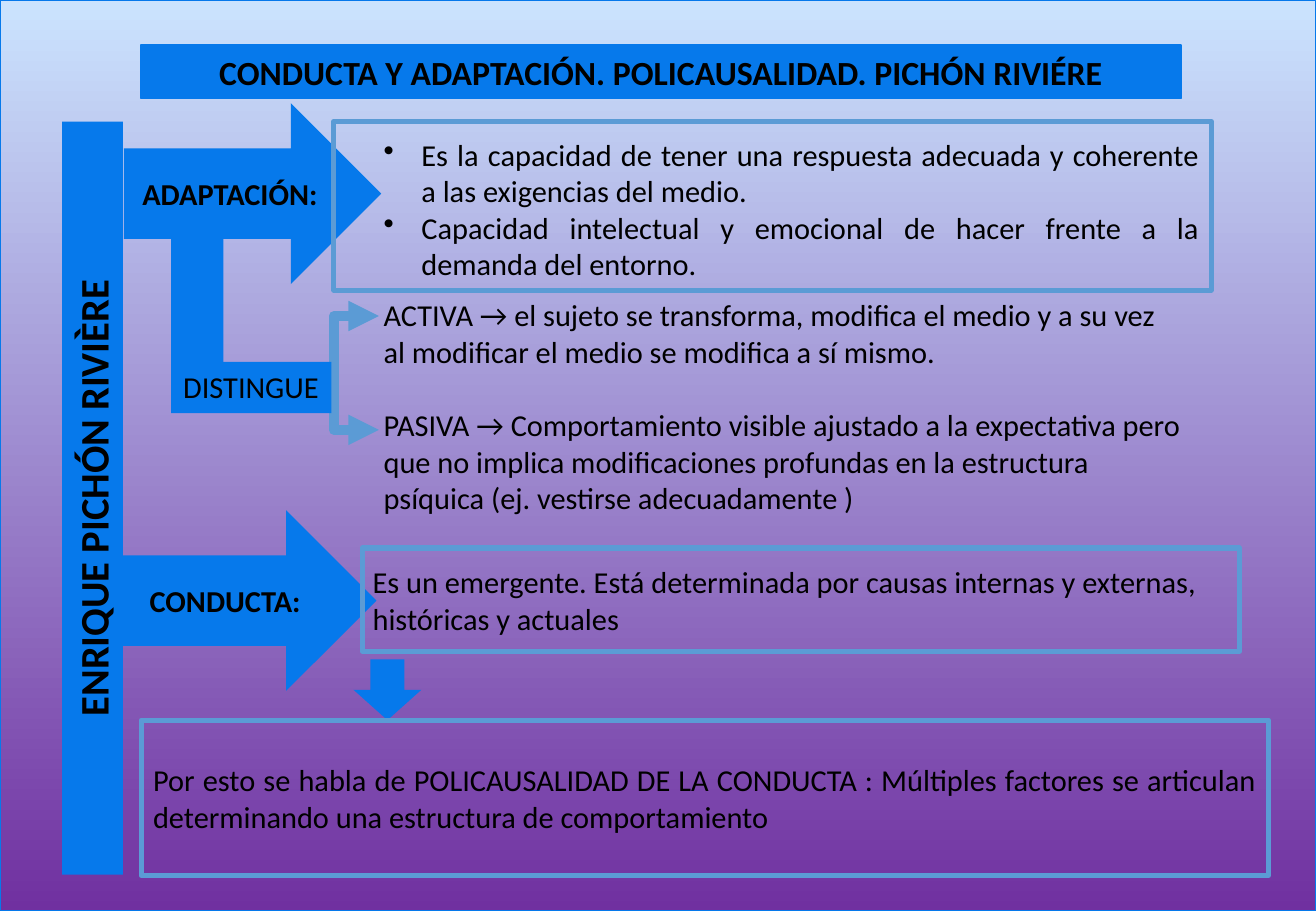
import pptx
import pptx.util
import pptx.dml.color
import pptx.enum.shapes
import pptx.enum.text
import pptx.oxml
import pptx.oxml.ns
from dataclasses import dataclass

Cm = pptx.util.Cm
Pt = pptx.util.Pt
KIND = pptx.enum.shapes.MSO_SHAPE
ALIGN = pptx.enum.text.PP_ALIGN
ANCHOR = pptx.enum.text.MSO_ANCHOR
qn = pptx.oxml.ns.qn


@dataclass(frozen=True)
class Theme:
    font: str = "Calibri"
    ink: str = "000000"
    blue: str = "0679EB"
    pale: str = "5B9BD5"
    sky: str = "CBE4FE"
    plum: str = "7030A0"
    body: int = 18
    head: int = 20
    side: int = 24


theme = Theme()


def tint(code):
    return pptx.dml.color.RGBColor.from_string(code)


def apply(target, values):
    for name, value in values.items():
        setattr(target, name, value)


def place(box, x, y, w, h):
    return box[0] + x, box[1] + y, w, h


def paint(shape, fill=None, line=None, width=1):
    if fill:
        shape.fill.solid()
        shape.fill.fore_color.rgb = tint(fill)
    else:
        shape.fill.background()
    if line:
        shape.line.color.rgb = tint(line)
        shape.line.width = Pt(width)
    else:
        shape.line.fill.background()


def block(slide, kind, box, fill=None, line=None, width=1):
    shape = slide.shapes.add_shape(kind, *map(Cm, box))
    shape.shadow.inherit = False
    paint(shape, fill, line, width)
    return shape


def write(shape, lines, size=theme.body, bold=False, align=ALIGN.LEFT,
          anchor=ANCHOR.TOP, gap=0, dots=False):
    frame = shape.text_frame
    apply(frame, {"word_wrap": True, "vertical_anchor": anchor,
                  "auto_size": pptx.enum.text.MSO_AUTO_SIZE.NONE})
    for index, line in enumerate(lines):
        para = frame.add_paragraph() if index else frame.paragraphs[0]
        apply(para, {"alignment": align, "space_before": Pt(gap if index else 0)})
        run = para.add_run()
        run.text = line
        apply(run.font, {"name": theme.font, "size": Pt(size), "bold": bold})
        run.font.color.rgb = tint(theme.ink)
        if dots:
            props = para._p.get_or_add_pPr()
            props.set("marL", str(Cm(0.79)))
            props.set("indent", str(Cm(-0.79)))
            pptx.oxml.parse_xml(
                '<a:buFont xmlns:a="http://schemas.openxmlformats.org/'
                'drawingml/2006/main" typeface="Arial"/>')
            mark = props.makeelement(qn("a:buChar"), {"char": "•"})
            props.append(mark)


def note(slide, box, lines, **style):
    write(slide.shapes.add_textbox(*map(Cm, box)), lines, **style)


def bend(slide, start, end):
    link = slide.shapes.add_connector(
        pptx.enum.shapes.MSO_CONNECTOR.ELBOW, *map(Cm, start + end))
    link.line.color.rgb = tint(theme.pale)
    link.line.width = Pt(6)
    stroke = link.line._get_or_add_ln()
    stroke.append(stroke.makeelement(qn("a:tailEnd"), {"type": "triangle"}))
    props = link.element.spPr
    props.append(props.makeelement(qn("a:effectLst"), {}))


def backdrop(slide, box):
    shape = block(slide, KIND.RECTANGLE, box, line=theme.blue, width=0.5)
    shape.fill.gradient()
    shape.fill.gradient_angle = 270
    for stop, code, spot in zip(shape.fill.gradient_stops,
                                (theme.sky, theme.plum), (0, 1)):
        stop.color.rgb = tint(code)
        stop.position = spot
    slide.shapes.title.element.addprevious(shape.element)


def header(slide, box):
    title = slide.shapes.title
    apply(title, dict(zip(("left", "top", "width", "height"), map(Cm, box))))
    paint(title, theme.blue, theme.blue, 0.75)
    write(title, ["CONDUCTA Y ADAPTACIÓN. POLICAUSALIDAD. PICHÓN RIVIÉRE"],
          theme.head, True, ALIGN.CENTER, ANCHOR.MIDDLE)


def sidebar(slide, box):
    x, y, w, h = box
    bar = block(slide, KIND.RECTANGLE,
                (x + (w - h) / 2, y + (h - w) / 2, h, w), theme.blue)
    bar.rotation = 270
    write(bar, ["ENRIQUE PICHÓN RIVIÈRE"], theme.side, True, ALIGN.CENTER)


def concept(slide, box, label, border, area, lines, **style):
    arrow = block(slide, KIND.RIGHT_ARROW, place(box, 0, 0, 5.38, 3.78), theme.blue)
    write(arrow, [label], bold=True, align=ALIGN.CENTER, anchor=ANCHOR.MIDDLE)
    block(slide, KIND.RECTANGLE, place(box, *border), line=theme.pale, width=3)
    note(slide, place(box, *area), lines, **style)


def branches(slide, box):
    x, y = box[:2]
    block(slide, KIND.RECTANGLE, place(box, 0, 0, 1.09, 2.82), theme.blue)
    note(slide, place(box, 4.19, 1.09, 17.22, 4.88), [
        "ACTIVA → el sujeto se transforma, modifica el medio y a su vez "
        "al modificar el medio se modifica a sí mismo.",
        "PASIVA → Comportamiento visible ajustado a la expectativa pero "
        "que no implica modificaciones profundas en la estructura "
        "psíquica (ej. vestirse adecuadamente )"], gap=22)
    for start, end in ((3.25, 1.63), (2.92, 4.01)):
        bend(slide, (x + 2.46, y + start), (x + 4.34, y + end))
    tag = block(slide, KIND.RECTANGLE, place(box, 0, 2.59, 3.35, 1.07), theme.blue)
    write(tag, ["DISTINGUE"])


def outcome(slide, box):
    block(slide, KIND.DOWN_ARROW, place(box, 4.44, 0, 1.42, 1.27), theme.blue)
    panel = block(slide, KIND.RECTANGLE, place(box, 0, 1.27, box[2], box[3] - 1.27),
                  line=theme.pale, width=3)
    write(panel, ["Por esto se habla de POLICAUSALIDAD DE LA CONDUCTA : Múltiples "
                  "factores se articulan determinando una estructura de "
                  "comportamiento"], align=ALIGN.JUSTIFY, anchor=ANCHOR.MIDDLE)


def main():
    deck = pptx.Presentation()
    apply(deck, {"slide_width": Cm(27.51), "slide_height": Cm(19.05)})
    slide = deck.slides.add_slide(deck.slide_layouts[5])
    backdrop(slide, (0, 0, 27.51, 19.05))
    header(slide, (2.95, 0.94, 21.74, 1.12))
    sidebar(slide, (1.3, 2.54, 1.27, 15.75))
    concept(slide, (2.59, 2.16), "ADAPTACIÓN:",
            (4.39, 0.38, 18.34, 3.53), (5.18, 0.56, 17.55, 3.33),
            ["Es la capacidad de tener una respuesta adecuada y coherente "
             "a las exigencias del medio.",
             "Capacidad intelectual y emocional de hacer frente a la "
             "demanda del entorno."], align=ALIGN.JUSTIFY, dots=True)
    branches(slide, (3.58, 4.98))
    concept(slide, (2.49, 10.67), "CONDUCTA:",
            (5.08, 0.79, 18.34, 2.16), (5.05, 0.99, 18.01, 1.8),
            ["Es un emergente. Está determinada por causas internas y "
             "externas, históricas y actuales"])
    outcome(slide, (2.95, 13.79, 23.57, 4.52))
    deck.save("out.pptx")


if __name__ == "__main__":
    main()
